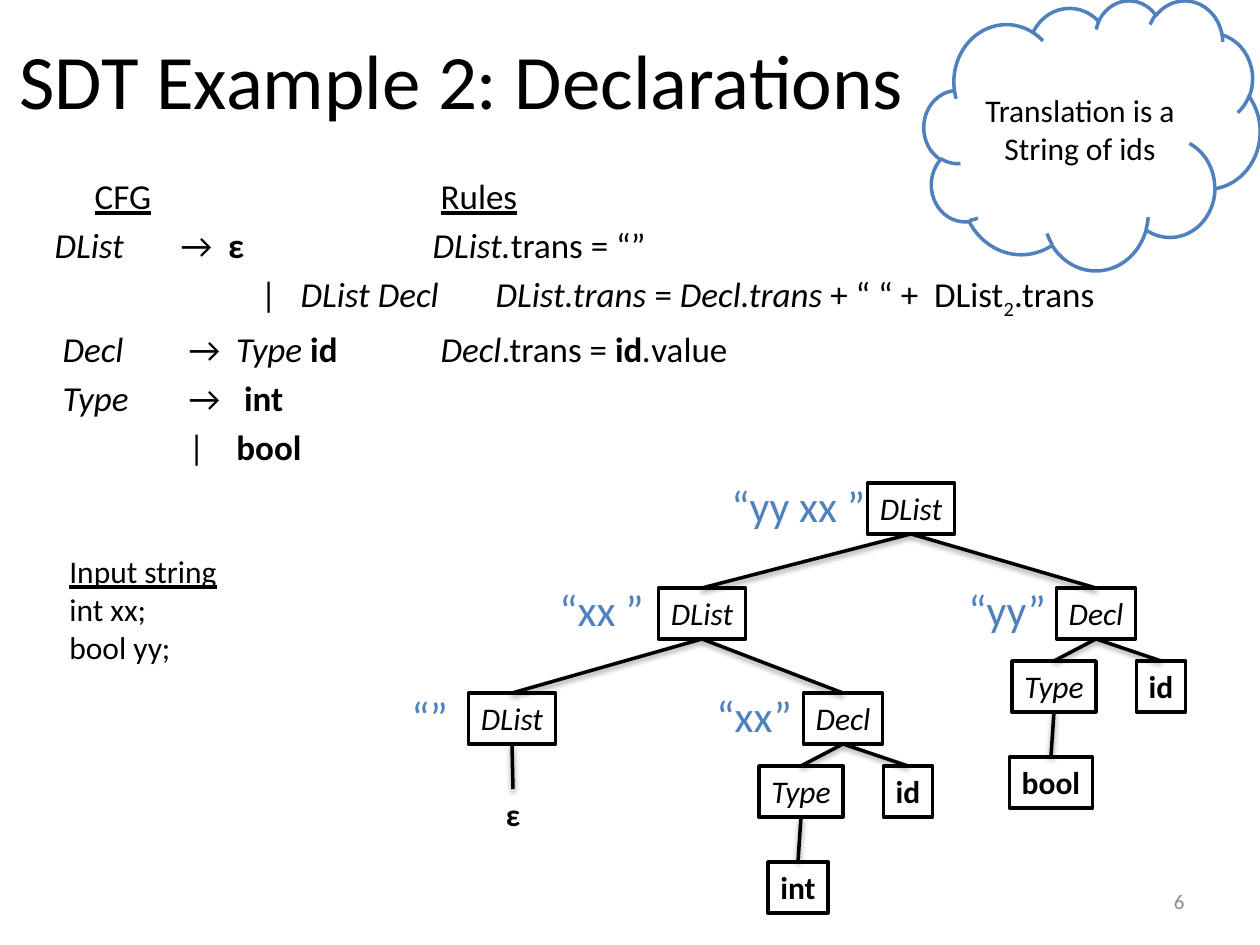
from dataclasses import dataclass

from lxml.etree import SubElement
from pptx import Presentation
from pptx.dml.color import RGBColor
from pptx.enum.shapes import MSO_CONNECTOR as Connector, MSO_SHAPE as Shape
from pptx.enum.text import MSO_ANCHOR as Anchor, MSO_AUTO_SIZE as AutoSize, PP_ALIGN as Align
from pptx.oxml.ns import qn
from pptx.util import Emu, Pt

EMU_PER_PX = 914400 / 126


@dataclass(frozen=True)
class Theme:
    font: str = "Calibri"
    ink: str = "000000"
    paper: str = "FFFFFF"
    accent: str = "4F81BD"
    muted: str = "8B8B8B"
    title: int = 44
    body: int = 20
    node: int = 18
    value: int = 25
    number: int = 12
    line: int = 2


THEME = Theme()
BOTTOM, TOP = 2, 0
NODE_HEIGHT = 51
LEVEL = 105
NODE_WIDTHS = {"DList": 87, "Decl": 79, "Type": 84, "id": 49, "bool": 83, "int": 60, "ε": 39}

GRAMMAR = [
    (8, 32, [("CFG", "u"), ("\t\t\t\t\t", ""), ("Rules", "u")]),
    (0, 0, [("DList \t", "i"), ("→  ", ""), ("ε \t\t\t", "b"), ("DList.", "i"),
            ("trans = “”", "")]),
    (0, 206, [("|   ", ""), ("DList Decl\tDList.trans ", "i"), ("= ", ""),
              ("Decl.trans", "i"), (" + “ “ +  DList", ""), ("2", "s"), (".trans", "")]),
    (8, 0, [("Decl \t", "i"), ("→  ", ""), ("Type ", "i"), ("id \t\t", "b"), ("Decl", "i"),
            (".trans = ", ""), ("id", "b"), (".", "i"), ("value", "")]),
    (8, 0, [("Type \t", "i"), ("→   ", ""), ("int", "b")]),
    (8, 126, [("|    ", ""), ("bool", "b")]),
]

TRANSLATIONS = [
    ("“yy xx ”", 719, 473, 163),
    ("“xx ”", 547, 577, 114),
    ("“yy”", 956, 577, 106),
    ("“”", 399, 684, 66),
    ("“xx”", 704, 683, 105),
]


def px(value):
    return Emu(round(value * EMU_PER_PX))


def place(shape, left, top, width, height):
    shape.left, shape.top, shape.width, shape.height = map(px, (left, top, width, height))


def style_run(run, size, color=THEME.ink, marks=""):
    font = run.font
    font.name, font.size = THEME.font, Pt(size)
    font.color.rgb = RGBColor.from_string(color)
    font.bold, font.italic, font.underline = ("b" in marks, "i" in marks, "u" in marks)
    if "s" in marks:
        run.font._element.set("baseline", "-25000")


def style_text(frame, size, color=THEME.ink, marks="", align=Align.LEFT):
    for paragraph in frame.paragraphs:
        paragraph.alignment = align
        for run in paragraph.runs:
            style_run(run, size, color, marks)


def add_label(slide, text, box, size, color=THEME.ink, marks=""):
    label = slide.shapes.add_textbox(*map(px, box))
    frame = label.text_frame
    frame.text = text
    frame.word_wrap = False
    frame.auto_size = AutoSize.SHAPE_TO_FIT_TEXT
    style_text(frame, size, color, marks)
    return label


def add_outline(slide, kind, text, box, line_color):
    shape = slide.shapes.add_shape(kind, *map(px, box))
    shape.shadow.inherit = False
    shape.fill.solid()
    shape.fill.fore_color.rgb = RGBColor.from_string(THEME.paper)
    shape.line.color.rgb = RGBColor.from_string(line_color)
    shape.line.width = Pt(THEME.line)
    shape.text_frame.text = text
    return shape


def add_node(slide, text, center, top, marks="i"):
    width = NODE_WIDTHS[text]
    box = (center - width / 2, top, width, NODE_HEIGHT)
    node = add_outline(slide, Shape.RECTANGLE, text, box, THEME.ink)
    frame = node.text_frame
    frame.word_wrap = True
    frame.margin_left = frame.margin_right = 0
    frame.vertical_anchor = Anchor.TOP
    style_text(frame, THEME.node, marks=marks, align=Align.CENTER)
    return node


def add_branch(slide, parent, child):
    branch = slide.shapes.add_connector(Connector.STRAIGHT, 0, 0, 0, 0)
    branch.begin_connect(parent, BOTTOM)
    branch.end_connect(child, TOP)
    branch.line.color.rgb = RGBColor.from_string(THEME.ink)
    branch.line.width = Pt(THEME.line)
    effects = SubElement(branch._element.spPr, qn("a:effectLst"))
    shadow = SubElement(effects, qn("a:outerShdw"), blurRad="40000", dist="20000",
                        dir="5400000", rotWithShape="0")
    color = SubElement(shadow, qn("a:srgbClr"), val=THEME.ink)
    SubElement(color, qn("a:alpha"), val="38000")


def add_declaration(slide, center, top, type_name):
    declaration = add_node(slide, "Decl", center, top)
    type_node = add_node(slide, "Type", center - 42, top + 73)
    identifier = add_node(slide, "id", center + 65, top + 73, "b")
    leaf = add_node(slide, type_name, center - 45, top + 169, "b")
    add_branch(slide, declaration, type_node)
    add_branch(slide, declaration, identifier)
    add_branch(slide, type_node, leaf)
    return declaration


def add_tree(slide, top):
    root, inner, last = [add_node(slide, "DList", center, top + level * LEVEL)
                         for level, center in enumerate((911, 702, 512))]
    outer_declaration = add_declaration(slide, 1096, top + LEVEL, "bool")
    inner_declaration = add_declaration(slide, 843, top + 2 * LEVEL, "int")
    width = NODE_WIDTHS["ε"]
    empty = add_label(slide, "ε", (513 - width / 2, 789, width, NODE_HEIGHT),
                      THEME.node, marks="b")
    for parent, child in ((root, inner), (root, outer_declaration), (inner, last),
                          (inner, inner_declaration), (last, empty)):
        add_branch(slide, parent, child)


def fill_title(title):
    place(title, -105, 0, 1134, 158)
    title.text_frame.text = "SDT Example 2: Declarations"
    title.text_frame.vertical_anchor = Anchor.MIDDLE
    style_text(title.text_frame, THEME.title, align=Align.CENTER)


def fill_grammar(body):
    place(body, 42, 168, 1176, 624)
    frame = body.text_frame
    frame.auto_size = AutoSize.NONE
    for index, (margin, indent, pieces) in enumerate(GRAMMAR):
        paragraph = frame.add_paragraph() if index else frame.paragraphs[0]
        paragraph.space_before = Pt(4)
        properties = paragraph._p.get_or_add_pPr()
        properties.set("marL", str(px(margin)))
        properties.set("indent", str(px(indent)))
        SubElement(properties, qn("a:buNone"))
        for text, marks in pieces:
            run = paragraph.add_run()
            run.text = text
            style_run(run, THEME.body, marks=marks)


def main():
    presentation = Presentation()
    presentation.slide_width, presentation.slide_height = px(1260), px(945)
    slide = presentation.slides.add_slide(presentation.slide_layouts[1])
    fill_title(slide.shapes.title)
    fill_grammar(slide.placeholders[1])

    program = add_label(slide, "Input string\nint xx;\nbool yy;", (57, 546, 175, 126), THEME.node)
    program.text_frame.paragraphs[0].runs[0].font.underline = True

    add_tree(slide, 483)
    for text, left, top, width in TRANSLATIONS:
        add_label(slide, text, (left, top, width, 64), THEME.value, THEME.accent)

    cloud = add_outline(slide, Shape.CLOUD, "Translation is a String of ids",
                        (924, 0, 336, 270), THEME.accent)
    cloud.text_frame.vertical_anchor = Anchor.MIDDLE
    style_text(cloud.text_frame, THEME.node, align=Align.CENTER)

    number = slide.shapes.add_textbox(*map(px, (903, 876, 294, 50)))
    number.text_frame.text = "6"
    number.text_frame.word_wrap = True
    number.text_frame.vertical_anchor = Anchor.MIDDLE
    style_text(number.text_frame, THEME.number, THEME.muted, align=Align.RIGHT)

    presentation.save("out.pptx")


if __name__ == "__main__":
    main()
